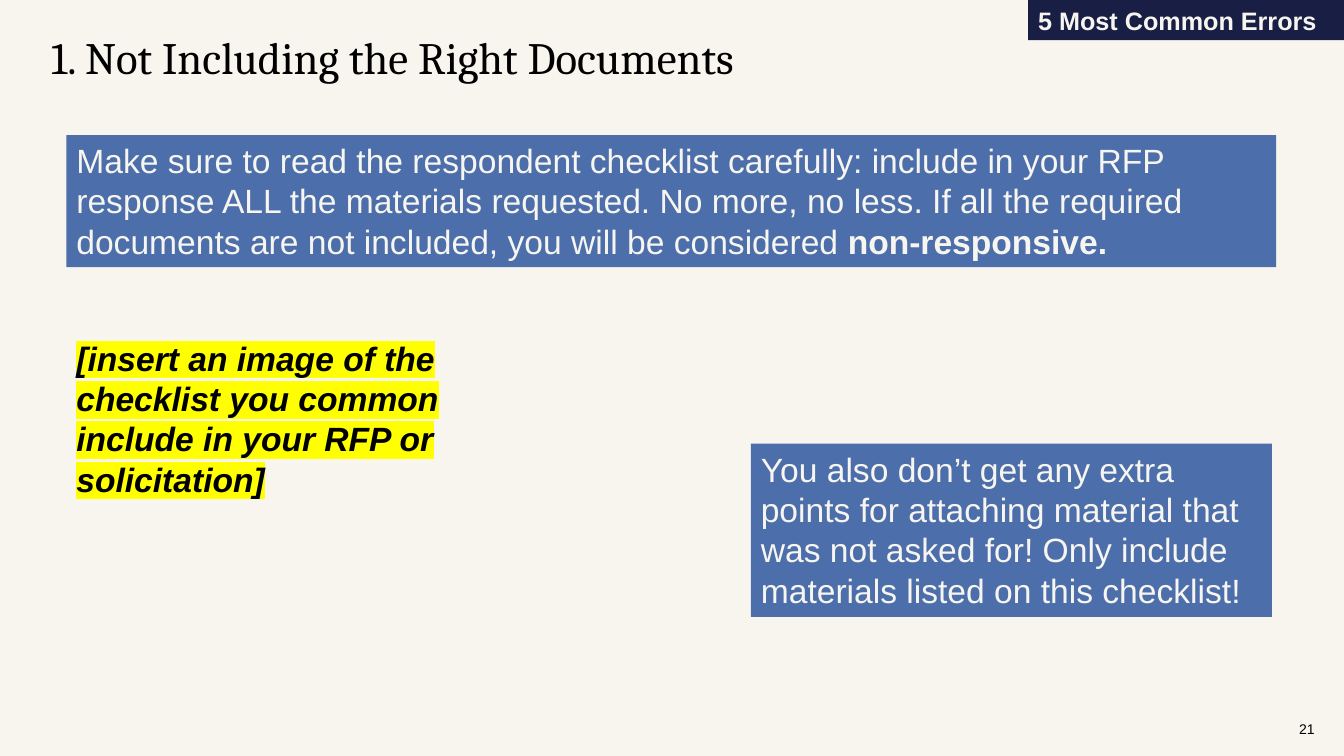
"""Build the slide on the first common error: not including the right documents."""
from dataclasses import dataclass

from lxml.etree import SubElement
from pptx import Presentation
from pptx.dml.color import RGBColor
from pptx.enum.shapes import MSO_SHAPE
from pptx.enum.text import MSO_ANCHOR, MSO_AUTO_SIZE, PP_ALIGN
from pptx.oxml.ns import qn
from pptx.util import Pt


@dataclass(frozen=True)
class Theme:
    cream: str = "F8F5EE"
    light_text: str = "F7F5EF"
    navy: str = "181E44"
    blue: str = "4C6EAB"
    black: str = "000000"
    yellow: str = "FFFF00"
    heading_font: str = "Cambria"
    body_font: str = "Arial"
    title_size: int = 32
    body_size: int = 24
    tag_size: int = 18
    number_size: int = 10


theme = Theme()


def add_block(text, bounds, size, color, fill=None, font=theme.body_font):
    left, top, width, height = (Pt(length) for length in bounds)
    if fill:
        block = slide.shapes.add_shape(MSO_SHAPE.RECTANGLE, left, top, width, height)
        block.shadow.inherit = False
        block.fill.solid()
        block.fill.fore_color.rgb = RGBColor.from_string(fill)
        block.line.fill.background()
    else:
        block = slide.shapes.add_textbox(left, top, width, height)
    frame = block.text_frame
    frame.text = text
    frame.word_wrap = True
    frame.vertical_anchor = MSO_ANCHOR.TOP
    frame.paragraphs[0].alignment = PP_ALIGN.LEFT
    style_run(frame.paragraphs[0].runs[0], size, color, font)
    return frame


def style_run(run, size, color, font=theme.body_font):
    run.font.size = Pt(size)
    run.font.name = font
    run.font.color.rgb = RGBColor.from_string(color)


deck = Presentation()
deck.slide_width, deck.slide_height = Pt(960), Pt(540)
slide = deck.slides.add_slide(deck.slide_layouts[6])
slide.background.fill.solid()
slide.background.fill.fore_color.rgb = RGBColor.from_string(theme.cream)

page_number = add_block("21", (920.9, 506.2, 39.1, 28.8), theme.number_size, theme.black)
page_number.vertical_anchor = MSO_ANCHOR.MIDDLE

title = add_block("1. Not Including the Right Documents", (29.5, 20.9, 864, 42.5),
                  theme.title_size, theme.black, font=theme.heading_font)
title.margin_top = 0

section_tag = add_block("5 Most Common Errors", (734.4, 0, 225.6, 28.8),
                        theme.tag_size, theme.light_text, theme.navy)
section_tag.paragraphs[0].runs[0].font.bold = True

checklist_note = add_block(
    "[insert an image of the checklist you common include in your RFP or solicitation]",
    (47.5, 237.6, 341.3, 123.8), theme.body_size, theme.black)
note_run = checklist_note.paragraphs[0].runs[0]
note_run.font.bold = note_run.font.italic = True
note_properties = note_run.font.fill._xPr
highlight = SubElement(note_properties, qn("a:highlight"))
SubElement(highlight, qn("a:srgbClr")).set("val", theme.yellow)
note_properties.find(qn("a:solidFill")).addnext(highlight)

advice = add_block(
    "Make sure to read the respondent checklist carefully: include in your RFP response "
    "ALL the materials requested. No more, no less. If all the required documents are not "
    "included, you will be considered ",
    (47.5, 96.5, 864, 94.3), theme.body_size, theme.light_text, theme.blue)
consequence = advice.paragraphs[0].add_run()
consequence.text = "non-responsive."
style_run(consequence, theme.body_size, theme.light_text)
consequence.font.bold = True

extras_warning = add_block(
    "You also don’t get any extra points for attaching material that was not asked for! "
    "Only include materials listed on this checklist!",
    (536.4, 316.8, 372.2, 123.8), theme.body_size, theme.light_text, theme.blue)

for growing_text in (checklist_note, advice, extras_warning):
    growing_text.auto_size = MSO_AUTO_SIZE.SHAPE_TO_FIT_TEXT

deck.save("out.pptx")
